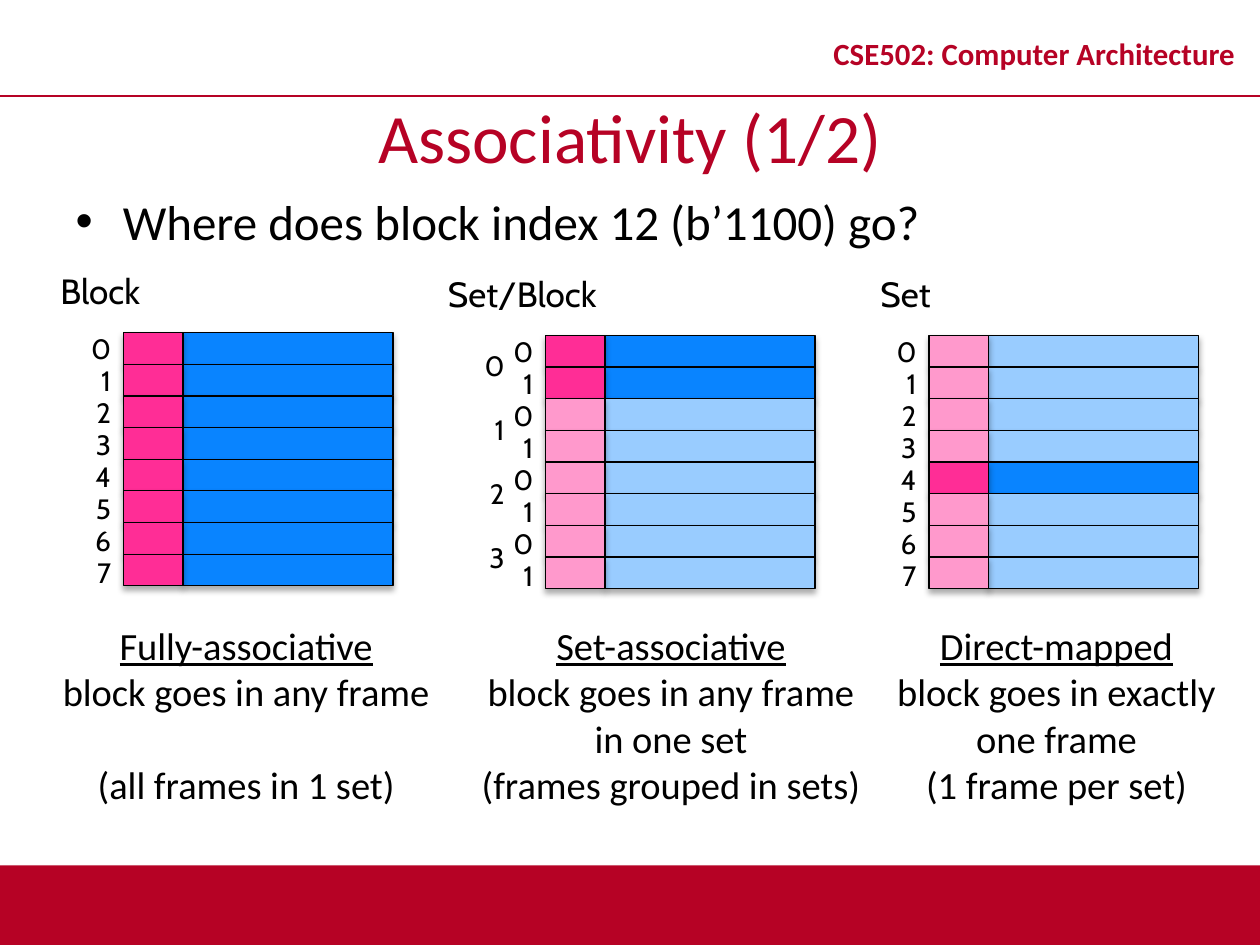
from lxml import etree
from pptx import Presentation
from pptx.dml.color import RGBColor
from pptx.enum.shapes import MSO_CONNECTOR, MSO_SHAPE
from pptx.enum.text import MSO_ANCHOR, MSO_AUTO_SIZE, PP_ALIGN
from pptx.oxml.ns import qn
from pptx.util import Pt

RECT, STRAIGHT = MSO_SHAPE.RECTANGLE, MSO_CONNECTOR.STRAIGHT
TOP, MIDDLE = MSO_ANCHOR.TOP, MSO_ANCHOR.MIDDLE
CENTER, LEFT, RIGHT = PP_ALIGN.CENTER, PP_ALIGN.LEFT, PP_ALIGN.RIGHT
FIT_SHAPE, NO_FIT = MSO_AUTO_SIZE.SHAPE_TO_FIT_TEXT, MSO_AUTO_SIZE.NONE
rgb = RGBColor.from_string

RED, BLACK = "B60225", "000000"
ACTIVE, IDLE = ("FF2D96", "0984FF"), ("FF99CC", "99CCFF")
ROW_H, LABEL_STEP, TAG_W, DATA_W = 18.1, 18.3, 34, 120


def write(sp, lines, size, font, color, align, anchor=MIDDLE, wrap=True):
    tf = sp.text_frame
    tf.word_wrap = wrap
    tf.auto_size = NO_FIT
    tf.vertical_anchor = anchor
    tf.text = "\n".join(lines)
    for p in tf.paragraphs:
        p.alignment = align
        f = p.runs[0].font
        f.name, f.size, f.color.rgb = font, Pt(size), rgb(color)
    return tf


def add_box(shapes, x, y, w, h, fill, line, alpha, blur, dist):
    sp = shapes.add_shape(RECT, Pt(x), Pt(y), Pt(w), Pt(h))
    sp.fill.solid()
    sp.fill.fore_color.rgb = rgb(fill)
    if line:
        sp.line.color.rgb = rgb(line)
        sp.line.width = Pt(0.75)
    else:
        sp.line.fill.background()
    sp.shadow.inherit = False
    effects = sp._element.spPr.find(qn("a:effectLst"))
    shadow = etree.SubElement(effects, qn("a:outerShdw"), blurRad=str(Pt(blur)),
                              dist=str(Pt(dist)), dir="5400000", rotWithShape="0")
    clr = etree.SubElement(shadow, qn("a:srgbClr"), val=BLACK)
    etree.SubElement(clr, qn("a:alpha"), val=str(alpha * 1000))


prs = Presentation()
prs.slide_width, prs.slide_height = Pt(720), Pt(540)
s = prs.slides.add_slide(prs.slide_layouts[1])

add_box(s.shapes, 0, 494.6, 720, 45.4, RED, None, 35, 3.1, 1.8)
rule = s.shapes.add_connector(STRAIGHT, Pt(0), Pt(54.7), Pt(720), Pt(54.7))
rule.line.color.rgb = rgb(RED)
rule.line.width = Pt(1)
etree.SubElement(rule._element.spPr, qn("a:effectLst"))

course = s.shapes.add_textbox(Pt(462.2), Pt(9.4), Pt(257.8), Pt(45.4))
tf = write(course, ["CSE502: Computer Architecture"], 17.6, "Calibri", RED, CENTER)
tf.paragraphs[0].line_spacing = 0.8
tf.paragraphs[0].runs[0].font.bold = True

title = s.shapes.title
title.left, title.top, title.width, title.height = Pt(0), Pt(54.7), Pt(720), Pt(45.4)
write(title, ["Associativity (1/2)"], 39.6, "Calibri", RED, CENTER)

body = s.placeholders[1]
body.left, body.top, body.width, body.height = Pt(36), Pt(105.8), Pt(648), Pt(41.8)
tf = write(body, ["Where does block index 12 (b’1100) go?"], 28, "Calibri", BLACK, LEFT, TOP)
p = tf.paragraphs[0]
p.space_before = Pt(0)
pPr = p._p.get_or_add_pPr()
pPr.set("marL", str(Pt(27)))
pPr.set("indent", str(Pt(-27)))
etree.SubElement(pPr, qn("a:buChar"), char="•")

caches = [
    ("Block", 70.6, 190, range(8), range(8), [],
     26.6, 228.2, ["Fully-associative", "block goes in any frame", "(all frames in 1 set)"], 26.8),
    ("Set/Block", 311.8, 191.6, [0, 1] * 4, [0, 1], range(4),
     266.4, 234, ["Set-associative", "block goes in any frame in one set",
                  "(frames grouped in sets)"], 0),
    ("Set", 530.8, 191.6, range(8), [4], [],
     504.7, 198, ["Direct-mapped", "block goes in exactly one frame", "(1 frame per set)"], 0),
]
for heading, x, y, numbers, active, sets, cap_x, cap_w, caption, gap in caches:
    cap = s.shapes.add_textbox(Pt(cap_x), Pt(352), Pt(cap_w), Pt(113.8))
    tf = write(cap, caption, 22, "Calibri", BLACK, CENTER, TOP)
    tf.auto_size = FIT_SHAPE
    tf.paragraphs[0].runs[0].font.underline = True
    tf.paragraphs[2].space_before = Pt(gap)

    cache = s.shapes.add_group_shape().shapes
    labels = [(heading, x - 45.4, y - 33.1, 64.1, 20, CENTER)]
    for i, number in enumerate(numbers):
        tag, data = ACTIVE if i in active else IDLE
        row_y = y + i * ROW_H
        add_box(cache, x + TAG_W, row_y, DATA_W, ROW_H, data, BLACK, 32, 3.5, 2.2)
        add_box(cache, x, row_y, TAG_W, ROW_H, tag, BLACK, 32, 3.5, 2.2)
        labels.append((str(number), x - TAG_W, y + i * LABEL_STEP, TAG_W, 16, RIGHT))
    for i in sets:
        labels.append((str(i), x - 50.4, y + 7.9 + i * 2 * LABEL_STEP, TAG_W, 16, RIGHT))
    for text, left, top, width, size, align in labels:
        label = cache.add_textbox(Pt(left), Pt(top), Pt(width), Pt(ROW_H))
        write(label, [text], size, "Cabin", BLACK, align, wrap=False)

prs.save("out.pptx")
